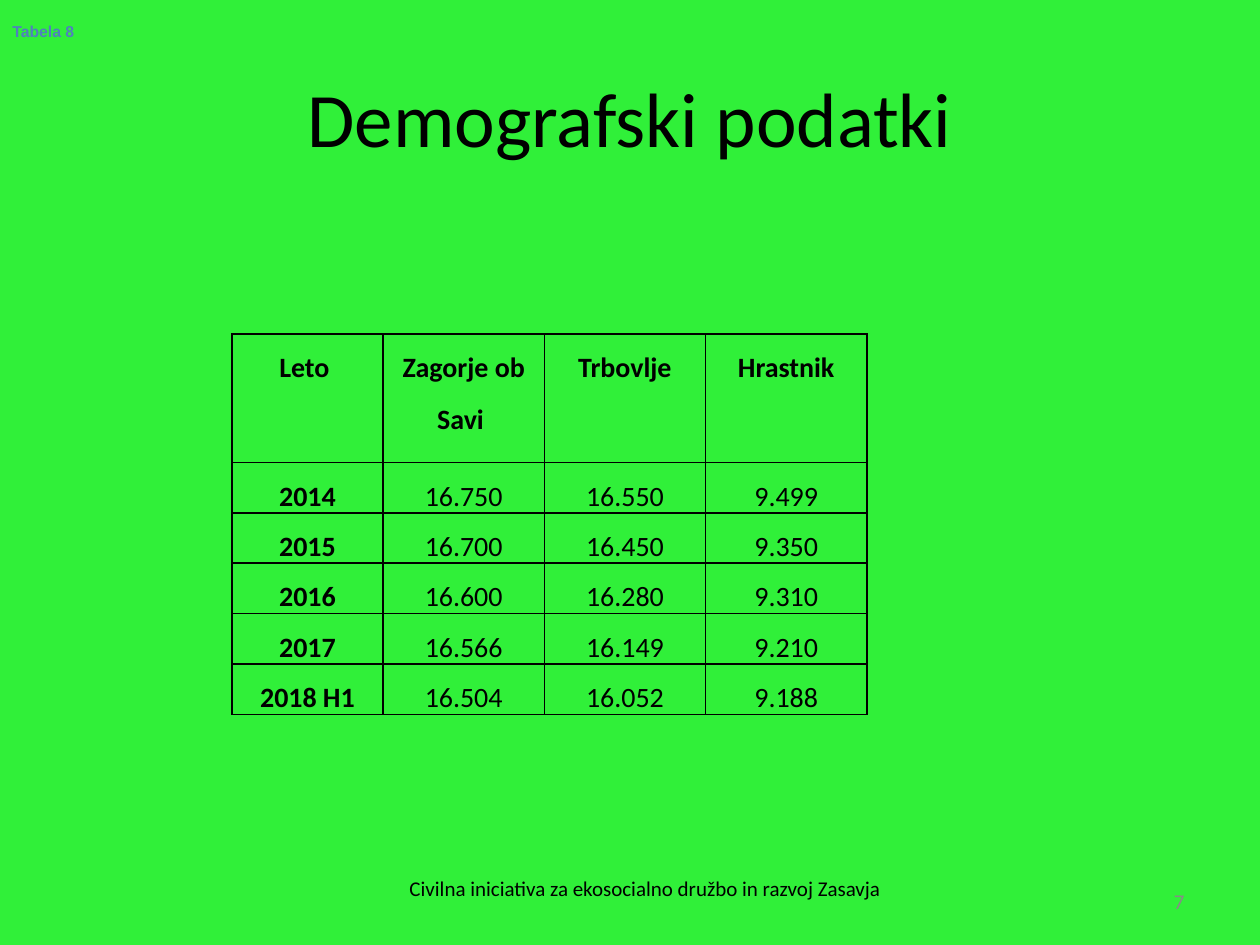
from lxml.etree import SubElement
from pptx import Presentation
from pptx.dml.color import RGBColor
from pptx.enum.text import MSO_ANCHOR, PP_ALIGN
from pptx.oxml.ns import qn
from pptx.util import Inches, Pt

TITLE = "Demografski podatki"
LABEL = "Tabela 8"
FOOT = "Civilna iniciativa za ekosocialno družbo in razvoj Zasavja"
PAGE = "7"
ROWS = [
    ("Leto ", "Zagorje ob Savi ", "Trbovlje", "Hrastnik"),
    ("2014", "16.750", "16.550", "9.499"),
    ("2015", "16.700", "16.450", "9.350"),
    ("2016", "16.600", "16.280", "9.310"),
    ("2017", "16.566", "16.149", "9.210"),
    ("2018 H1", "16.504", "16.052", "9.188"),
]
COLS = [1.2] + [1.28] * 3
HIGH = [1.02] + [0.4] * 5

GREEN = RGBColor(0x30, 0xF0, 0x39)
BLACK = RGBColor(0, 0, 0)
BLUE = RGBColor(0x4F, 0x81, 0xBD)
GRAY = RGBColor(0x89, 0x89, 0x89)


def write(frame, text, size, color=BLACK, bold=False, font="Calibri",
          align=PP_ALIGN.CENTER):
    para = frame.paragraphs[0]
    para.alignment = align
    run = para.add_run()
    run.text = text
    run.font.size = Pt(size)
    run.font.name = font
    run.font.bold = bold
    run.font.color.rgb = color
    return para


def add_text(slide, box, text, size, anchor=MSO_ANCHOR.MIDDLE, wrap=True, **look):
    frame = slide.shapes.add_textbox(*map(Inches, box)).text_frame
    frame.word_wrap = wrap
    frame.vertical_anchor = anchor
    write(frame, text, size, **look)
    return frame


def add_edges(cell):
    props = cell._tc.get_or_add_tcPr()
    for spot, side in enumerate(("a:lnL", "a:lnR", "a:lnT", "a:lnB")):
        line = SubElement(props, qn(side), w=str(Pt(1)))
        fill = SubElement(line, qn("a:solidFill"))
        SubElement(fill, qn("a:srgbClr"), val=str(BLACK))
        props.remove(line)
        props.insert(spot, line)


def add_grid(slide):
    table = slide.shapes.add_table(
        len(ROWS), len(COLS), Inches(1.84), Inches(2.65),
        Inches(sum(COLS)), Inches(sum(HIGH))).table
    table.horz_banding = False
    for col, wide in zip(table.columns, COLS):
        col.width = Inches(wide)
    for r, (row, high) in enumerate(zip(ROWS, HIGH)):
        table.rows[r].height = Inches(high)
        for c, text in enumerate(row):
            cell = table.cell(r, c)
            cell.fill.background()
            cell.margin_left = cell.margin_right = Inches(0.07)
            cell.margin_top = cell.margin_bottom = 0
            para = write(cell.text_frame, text, 16, bold=r == 0 or c == 0)
            para.line_spacing = 1.5
            para.space_before = Pt(10)
            add_edges(cell)


def main():
    deck = Presentation()
    deck.slide_width, deck.slide_height = Inches(10), Inches(7.5)
    slide = deck.slides.add_slide(deck.slide_layouts[5])
    slide.background.fill.solid()
    slide.background.fill.fore_color.rgb = GREEN

    title = slide.shapes.title
    title.left, title.top = Inches(0.5), Inches(0.3)
    title.width, title.height = Inches(9), Inches(1.25)
    title.text_frame.vertical_anchor = MSO_ANCHOR.MIDDLE
    write(title.text_frame, TITLE, 44)

    foot = add_text(slide, (2.66, 6.95, 4.92, 0.4), FOOT, 12, MSO_ANCHOR.TOP)
    foot.margin_top = 0
    add_grid(slide)
    add_text(slide, (0, 0, 10, 0.5), LABEL, 9, color=BLUE, bold=True,
             font="Arial", align=PP_ALIGN.JUSTIFY)
    add_text(slide, (7.17, 6.95, 2.33, 0.4), PAGE, 12, color=GRAY,
             align=PP_ALIGN.RIGHT)
    deck.save("out.pptx")


if __name__ == "__main__":
    main()
